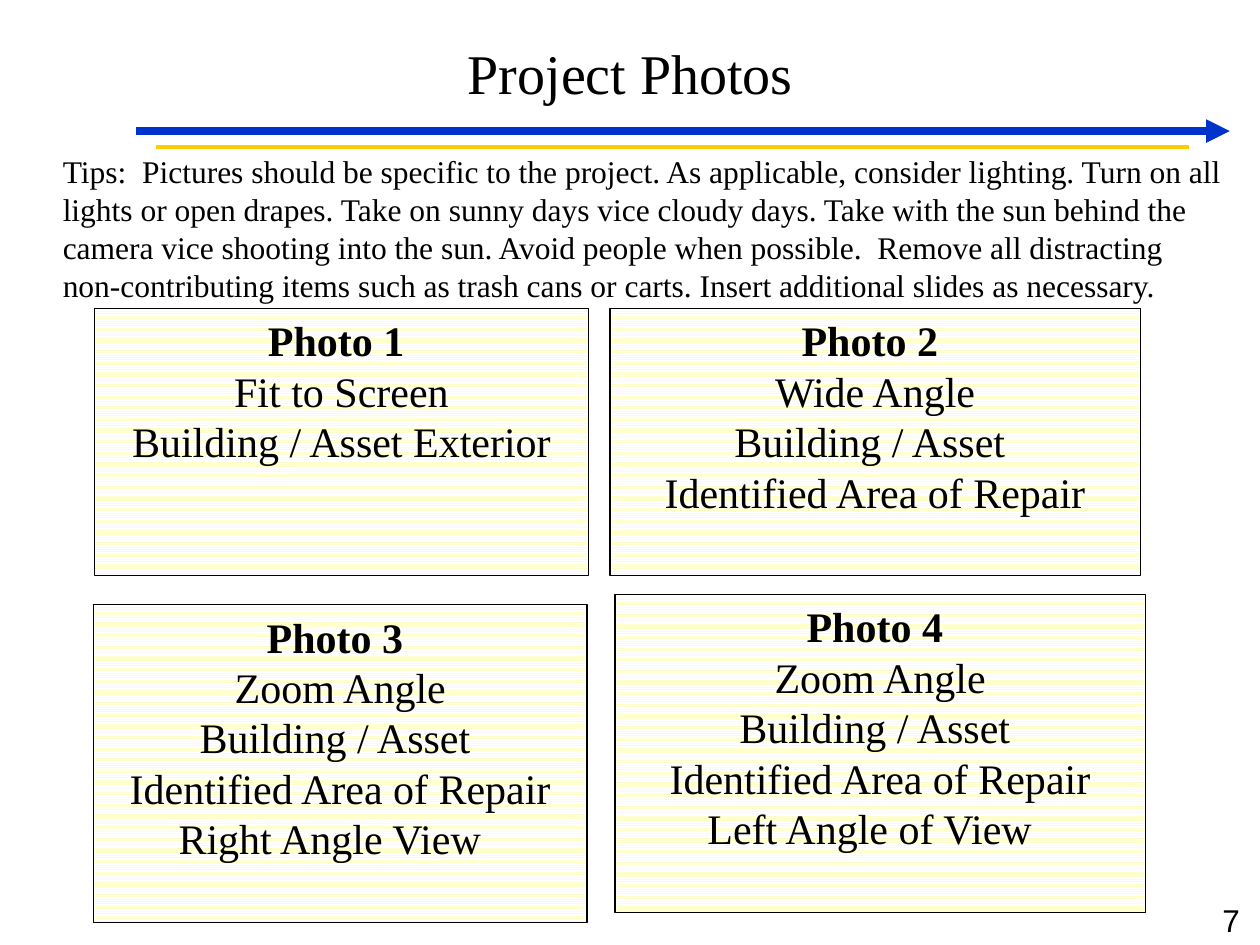
from lxml.etree import SubElement
from pptx import Presentation
from pptx.dml.color import RGBColor
from pptx.enum.dml import MSO_PATTERN
from pptx.enum.shapes import MSO_CONNECTOR, MSO_SHAPE
from pptx.enum.text import MSO_ANCHOR, PP_ALIGN
from pptx.oxml.ns import qn
from pptx.util import Inches, Pt

BLACK = RGBColor(0x00, 0x00, 0x00)
WHITE = RGBColor(0xFF, 0xFF, 0xFF)
BLUE = RGBColor(0x00, 0x33, 0xCC)
GOLD = RGBColor(0xFF, 0xCC, 0x00)
CREAM = RGBColor(0xFF, 0xFF, 0xCC)
SERIF = "Times New Roman"

TIPS = (
    "Tips:  Pictures should be specific to the project. As applicable, consider "
    "lighting. Turn on all lights or open drapes. Take on sunny days vice cloudy "
    "days. Take with the sun behind the camera vice shooting into the sun. Avoid "
    "people when possible.  Remove all distracting non-contributing items such as "
    "trash cans or carts. Insert additional slides as necessary."
)
AREA = ["Building / Asset ", "Identified Area of Repair"]
# (left, top, width, height), heading, lines
PHOTOS = [
    ((0.75, 2.45, 3.92, 2.12), "Photo 1 ", ["Fit to Screen", "Building / Asset Exterior"]),
    ((0.74, 4.8, 3.92, 2.52), "Photo 3 ", ["Zoom Angle", *AREA, "Right Angle View  "]),
    ((4.84, 2.45, 4.21, 2.12), "Photo 2 ", ["Wide Angle", *AREA]),
    ((4.88, 4.72, 4.21, 2.52), "Photo 4 ", ["Zoom Angle", *AREA, "Left Angle of View  "]),
]


def write_lines(tf, lines, size, align, font=SERIF, bold_first=False):
    for i, line in enumerate(lines):
        p = tf.add_paragraph() if i else tf.paragraphs[0]
        p.text = line
        p.alignment = align
        p.font.name = font
        p.font.size = Pt(size)
        p.font.bold = bold_first and i == 0
        p.font.color.rgb = BLACK


def add_rule(slide, left, right, y, color, width, arrow=False):
    c = slide.shapes.add_connector(
        MSO_CONNECTOR.STRAIGHT, Inches(left), Inches(y), Inches(right), Inches(y))
    c.line.color.rgb = color
    c.line.width = Pt(width)
    if arrow:
        SubElement(c.line._get_or_add_ln(), qn("a:tailEnd"), type="triangle")
    SubElement(c._element.spPr, qn("a:effectLst"))


def add_title(slide, text):
    title = slide.shapes.title
    title.left, title.top, title.width, title.height = map(Inches, (3.6, 0.25, 2.81, 0.64))
    tf = title.text_frame
    tf.word_wrap = False
    tf.vertical_anchor = MSO_ANCHOR.MIDDLE
    write_lines(tf, [text], 32, PP_ALIGN.CENTER)


def add_text(slide, box, text, align, font=SERIF, wrap=True):
    sp = slide.shapes.add_textbox(*map(Inches, box))
    sp.text_frame.word_wrap = wrap
    write_lines(sp.text_frame, [text], 18, align, font)
    return sp


def add_photo_box(slide, box, heading, lines):
    sp = slide.shapes.add_shape(MSO_SHAPE.RECTANGLE, *map(Inches, box))
    sp.shadow.inherit = False
    sp.fill.patterned()
    sp.fill.pattern = MSO_PATTERN.LIGHT_HORIZONTAL
    sp.fill.fore_color.rgb = CREAM
    sp.fill.back_color.rgb = WHITE
    sp.line.color.rgb = BLACK
    sp.line.width = Pt(0.75)
    tf = sp.text_frame
    tf.word_wrap = True
    tf.vertical_anchor = MSO_ANCHOR.TOP
    write_lines(tf, [heading, *lines], 24, PP_ALIGN.CENTER, bold_first=True)


def add_page_number(slide, number):
    sp = add_text(slide, (9.6, 7.14, 0.34, 0.33), number, PP_ALIGN.RIGHT, "Arial", wrap=False)
    sp.fill.solid()
    sp.fill.fore_color.rgb = WHITE
    sp.text_frame.vertical_anchor = MSO_ANCHOR.MIDDLE


def main():
    prs = Presentation()
    prs.slide_width, prs.slide_height = Inches(10), Inches(7.5)
    slide = prs.slides.add_slide(prs.slide_layouts[5])
    add_rule(slide, 1.08, 9.76, 1.04, BLUE, 4.5, arrow=True)
    add_rule(slide, 1.24, 9.44, 1.17, GOLD, 2.25)
    add_page_number(slide, "7")
    add_title(slide, "Project Photos")
    for box, heading, lines in PHOTOS:
        add_photo_box(slide, box, heading, lines)
    add_text(slide, (0.4, 1.16, 9.43, 1.31), TIPS, PP_ALIGN.LEFT)
    prs.save("out.pptx")


if __name__ == "__main__":
    main()
